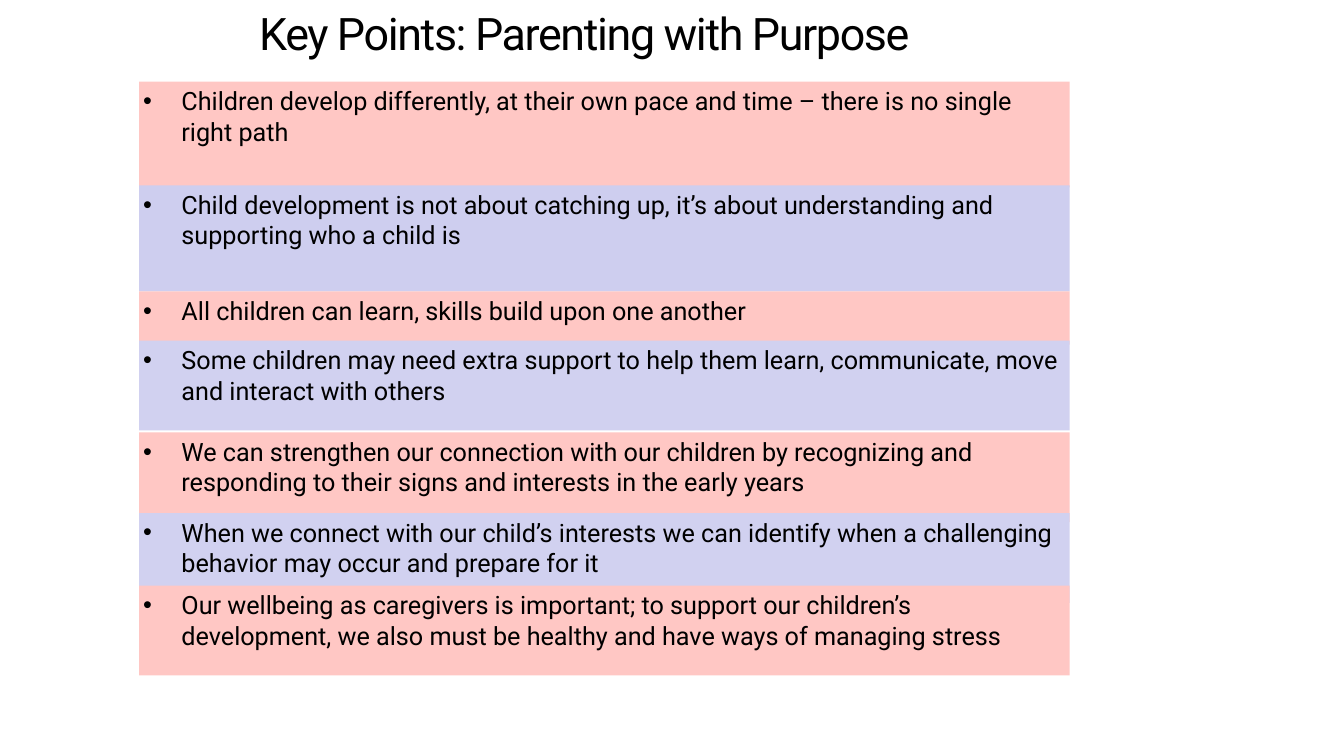
from pptx import Presentation
from pptx.dml.color import RGBColor
from pptx.enum.shapes import MSO_SHAPE
from pptx.enum.text import MSO_ANCHOR, MSO_AUTO_SIZE, PP_ALIGN
from pptx.oxml.ns import qn
from pptx.util import Pt
from lxml.etree import SubElement

EMU_PER_PX = 9144  # 100 px to the inch
FONT = "Roboto"
BLACK, PINK, LAVENDER, LILAC = "000000", "FFC7C4", "CECEEF", "D1D1F0"
BAND_LEFT, BAND_WIDTH = 138, 923
BULLET_INDENT = 38
INSET = 4

# Top, height, fill and text of each band, from back to front
KEY_POINTS = [
    (81, 105, PINK, "Children develop differently, at their own pace and time – "
     "there is no single right path"),
    (184, 105, LAVENDER, "Child development is not about catching up, it’s about "
     "understanding and supporting who a child is"),
    (289, 53, PINK, "All children can learn, skills build upon one another"),
    (338, 89, LILAC, "Some children may need extra support to help them learn, "
     "communicate, move and interact with others"),
    (429, 89, PINK, "We can strengthen our connection with our children by "
     "recognizing and responding to their signs and interests in the early years"),
    (509, 89, LILAC, "When we connect with our child’s interests we can identify "
     "when a challenging behavior may occur and prepare for it"),
    (581, 89, PINK, "Our wellbeing as caregivers is important; to support our "
     "children’s development, we also must be healthy and have ways of managing stress"),
]


def px(length):
    return length * EMU_PER_PX


def color(hex_string):
    return RGBColor.from_string(hex_string)


def set_text(shape, text, size, anchor, align):
    """Fill the shape's text frame with one paragraph and return it."""
    frame = shape.text_frame
    frame.text = text
    frame.word_wrap = True
    frame.auto_size = MSO_AUTO_SIZE.NONE
    frame.vertical_anchor = anchor
    frame.margin_left = frame.margin_right = px(INSET)
    frame.margin_top = frame.margin_bottom = px(INSET)
    paragraph = frame.paragraphs[0]
    paragraph.alignment = align
    font = paragraph.runs[0].font
    font.name, font.size = FONT, Pt(size)
    font.color.rgb = color(BLACK)
    return paragraph


def add_bullet(paragraph):
    properties = paragraph._p.get_or_add_pPr()
    properties.set("marL", str(px(BULLET_INDENT)))
    properties.set("indent", str(-px(BULLET_INDENT)))
    SubElement(properties, qn("a:buFont"), typeface="Arial")
    SubElement(properties, qn("a:buChar"), char="•")


def set_title(slide, text):
    title = slide.shapes.title
    title.left, title.top = px(27), px(-13)
    title.width, title.height = px(1105), px(93)
    paragraph = set_text(title, text, 32, MSO_ANCHOR.MIDDLE, PP_ALIGN.CENTER)
    paragraph.line_spacing = Pt(36)
    paragraph.runs[0]._r.get_or_add_rPr().set("spc", "-100")


def add_band(slide, top, height, fill, text):
    band = slide.shapes.add_shape(MSO_SHAPE.RECTANGLE, px(BAND_LEFT), px(top),
                                  px(BAND_WIDTH), px(height))
    band.shadow.inherit = False
    band.fill.solid()
    band.fill.fore_color.rgb = color(fill)
    band.line.fill.background()
    paragraph = set_text(band, text, 18, MSO_ANCHOR.TOP, PP_ALIGN.LEFT)
    add_bullet(paragraph)


def main():
    presentation = Presentation()
    presentation.slide_width, presentation.slide_height = px(1333), px(750)
    slide = presentation.slides.add_slide(presentation.slide_layouts[5])

    # Title
    set_title(slide, "Key Points: Parenting with Purpose")

    # Stacked bands, one per key point
    for top, height, fill, text in KEY_POINTS:
        add_band(slide, top, height, fill, text)

    presentation.save("out.pptx")


if __name__ == "__main__":
    main()
